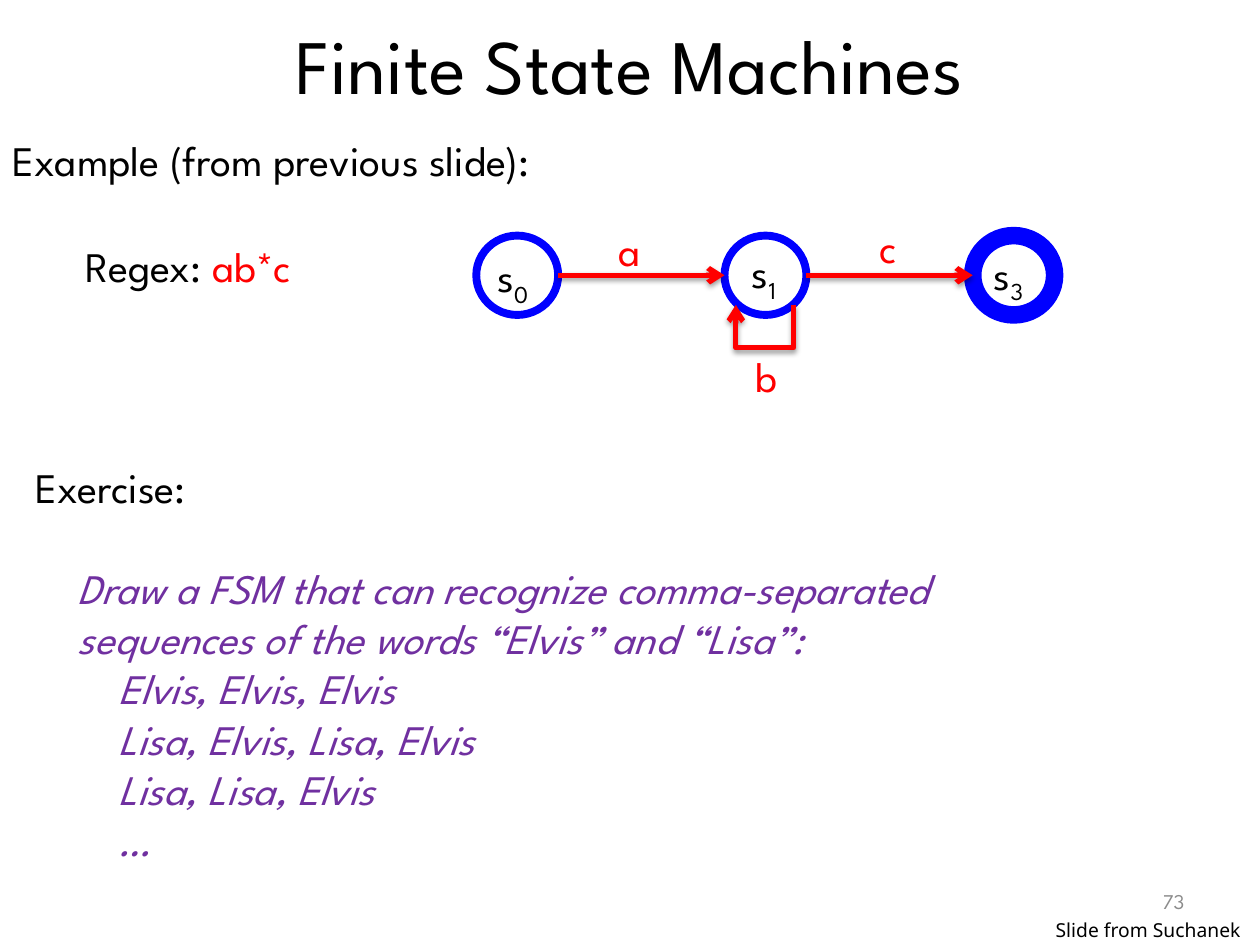
from lxml.etree import SubElement
from pptx import Presentation
from pptx.dml.color import RGBColor
from pptx.enum.shapes import MSO_CONNECTOR, MSO_SHAPE
from pptx.enum.text import MSO_ANCHOR, PP_ALIGN
from pptx.oxml.ns import qn
from pptx.util import Inches, Pt

COLORS = {"ink": "000000", "gray": "8C8C8C", "red": "FF0000",
          "blue": "0000FF", "violet": "7030A0"}
FONT, SMALL = "League Spartan", "Noto Sans"

# Grid of 100 columns by 75 rows
WIDTH, HEIGHT = Inches(10), Inches(7.5)
COLS, ROWS = 100, 75

# States: one row of equal circles at equal steps
LEFT, STEP, TOP, WIDE, HIGH = 37.8, 19.7, 18.7, 6.5, 6.3
MID = TOP + HIGH / 2


def col(num):
    return round(WIDTH * num / COLS)


def row(num):
    return round(HEIGHT * num / ROWS)


def area(x, y, w, h):
    return col(x), row(y), col(w), row(h)


def paint(name):
    return RGBColor.from_string(COLORS[name])


def style(item, **values):
    for key, value in values.items():
        setattr(item, key, value)


def write(par, text, color="ink", size=24, font=FONT, italic=None, base=None):
    run = par.add_run()
    run.text = text
    style(run.font, name=font, size=Pt(size), italic=italic)
    run.font.color.rgb = paint(color)
    if base:
        run.font._element.set("baseline", str(base * 1000))


def label(slide, place, *runs, wrap=False, align=PP_ALIGN.LEFT,
          anchor=MSO_ANCHOR.TOP):
    """Text box whose first paragraph holds (text, format) runs."""
    frame = slide.shapes.add_textbox(*area(*place)).text_frame
    style(frame, word_wrap=wrap, vertical_anchor=anchor)
    par = frame.paragraphs[0]
    par.alignment = align
    for text, form in runs:
        write(par, text, **form)
    return frame


def state(slide, index, sign, thick, text_at):
    ring = slide.shapes.add_shape(
        MSO_SHAPE.OVAL, *area(LEFT + index * STEP, TOP, WIDE, HIGH))
    ring.shadow.inherit = False
    ring.fill.background()
    ring.line.color.rgb = paint("blue")
    ring.line.width = Pt(thick)
    label(slide, (*text_at, 4.6, 5), ("s", {}), (sign, {"base": -25}))


def finish(edge):
    """Red line, open arrowhead and soft shadow for an edge."""
    edge.line.color.rgb = paint("red")
    edge.line.width = Pt(3)
    SubElement(edge.line._get_or_add_ln(), qn("a:tailEnd"), type="arrow")
    props = edge._element.spPr
    for old in props.findall(qn("a:effectLst")):
        props.remove(old)
    glow = SubElement(
        SubElement(props, qn("a:effectLst")), qn("a:outerShdw"),
        blurRad=str(Pt(3.1)), dist=str(Pt(1.6)), dir="5400000", rotWithShape="0")
    tint = SubElement(glow, qn("a:srgbClr"), val=COLORS["ink"])
    SubElement(tint, qn("a:alpha"), val="38000")


def arrow(slide, index):
    start = LEFT + index * STEP + WIDE
    finish(slide.shapes.add_connector(
        MSO_CONNECTOR.STRAIGHT, col(start), row(MID),
        col(start + STEP - WIDE), row(MID)))


def loop(slide, left, right, top, low):
    pen = slide.shapes.build_freeform(col(right), row(top))
    pen.add_line_segments([(col(x), row(y)) for x, y in
                           ((right, low), (left, low), (left, top))], close=False)
    edge = pen.convert_to_shape()
    edge.fill.background()
    finish(edge)


def task(slide):
    frame = label(slide, (1.8, 36.1, 96.1, 33.3), ("Exercise:", {}), wrap=True)
    lines = [(3.4, "Draw a FSM that can recognize comma-separated"),
             (3.4, "sequences of the words “Elvis” and “Lisa”:"),
             (6.6, "Elvis, Elvis, Elvis"),
             (6.6, "Lisa, Elvis, Lisa, Elvis"),
             (6.6, "Lisa, Lisa, Elvis"),
             (6.6, "…")]
    for num, (indent, text) in enumerate(lines):
        par = frame.add_paragraph()
        par._p.get_or_add_pPr().set("marL", str(col(indent)))
        if num == 0:
            par.space_before = Pt(29)
        write(par, text, "violet", italic=True)


def main():
    deck = Presentation()
    style(deck, slide_width=WIDTH, slide_height=HEIGHT)
    slide = deck.slides.add_slide(deck.slide_layouts[6])
    red = {"color": "red"}

    # Heading and page number
    label(slide, (5, 0, 90, 10.1), ("Finite State Machines", {"size": 44}),
          wrap=True, align=PP_ALIGN.CENTER, anchor=MSO_ANCHOR.MIDDLE)
    label(slide, (71.7, 69.5, 23.3, 4), ("73", {"size": 12, "color": "gray"}),
          wrap=True, align=PP_ALIGN.RIGHT, anchor=MSO_ANCHOR.MIDDLE)

    # Example and exercise
    label(slide, (0, 10.2, 50.4, 5), ("Example (from previous slide):", {}))
    label(slide, (5.8, 18.6, 22.4, 5), ("Regex: ", {}), ("ab*c", red))
    task(slide)

    # State machine
    state(slide, 0, "0", 4.5, (38.5, 19.4))
    state(slide, 1, "1", 4.5, (58.7, 19.1))
    state(slide, 2, "3", 10, (77.9, 19.2))
    for index in range(2):
        arrow(slide, index)
    loop(slide, 58.4, 63, 24.2, 27.6)
    for text, x, y in (("a", 48.1, 17.3), ("b", 59, 27.3), ("c", 68.8, 17.1)):
        label(slide, (x, y, 4.3, 5), (text, red))

    # Source line
    label(slide, (82.8, 72.4, 17.2, 2.9),
          ("Slide from Suchanek", {"size": 11, "font": SMALL}))
    deck.save("out.pptx")


if __name__ == "__main__":
    main()
